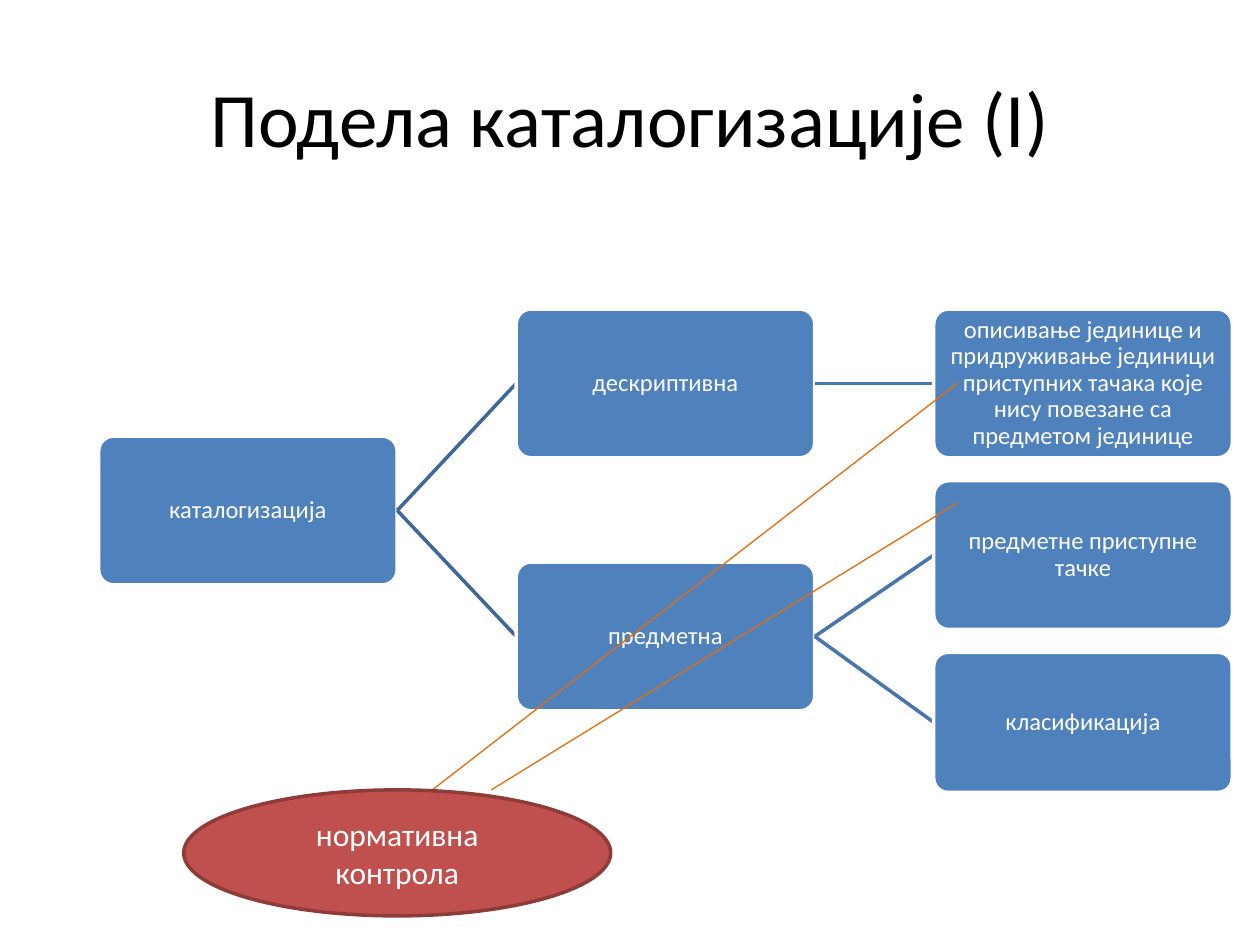
from pptx import Presentation
from pptx.dml.color import RGBColor
from pptx.enum.shapes import MSO_CONNECTOR, MSO_SHAPE
from pptx.enum.text import MSO_ANCHOR, PP_ALIGN
from pptx.oxml.ns import qn
from pptx.util import Pt
from lxml.etree import SubElement

WHITE = RGBColor(0xFF, 0xFF, 0xFF)
BLACK = RGBColor(0, 0, 0)
BLUE = RGBColor(0x4F, 0x81, 0xBD)
LINK_COLORS = [RGBColor(0x3F, 0x67, 0x97), RGBColor(0x48, 0x75, 0xAC)]
RED = RGBColor(0xC0, 0x50, 0x4D)
DARK_RED = RGBColor(0x8E, 0x3B, 0x39)
ORANGE = RGBColor(0xE4, 0x6C, 0x0A)

NODE_W, NODE_H = 170.6, 85
COLUMN_STEP = 238.6

# Node: text, top within the tree, height, children
TREE = ("каталогизација", 72.6, NODE_H, [
    ("дескриптивна", 0, NODE_H, [
        ("описивање јединице и придруживање јединици приступних тачака "
         "које нису повезане са предметом јединице", 0, NODE_H, []),
    ]),
    ("предметна", 144.6, NODE_H, [
        ("предметне приступне тачке", 98.1, NODE_H, []),
        ("класификација", 196.2, 80, []),
    ]),
])


def set_text(tf, text, size, color):
    tf.word_wrap = True
    tf.vertical_anchor = MSO_ANCHOR.MIDDLE
    p = tf.paragraphs[0]
    p.text = text
    p.alignment = PP_ALIGN.CENTER
    p.font.name = "Calibri"
    p.font.size = Pt(size)
    p.font.color.rgb = color
    return p


def add_shape(s, kind, x, y, w, h, fill, line):
    sp = s.shapes.add_shape(kind, Pt(x), Pt(y), Pt(w), Pt(h))
    sp.shadow.inherit = False
    sp.fill.solid()
    sp.fill.fore_color.rgb = fill
    sp.line.color.rgb = line
    sp.line.width = Pt(2)
    return sp


def add_line(s, x1, y1, x2, y2, color, width):
    cxn = s.shapes.add_connector(
        MSO_CONNECTOR.STRAIGHT, Pt(x1), Pt(y1), Pt(x2), Pt(y2))
    cxn.line.color.rgb = color
    cxn.line.width = Pt(width)
    SubElement(cxn._element.spPr, qn("a:effectLst"))
    return cxn


def add_title(s, x, y, w, h):
    title = s.shapes.title
    title.left, title.top, title.width, title.height = Pt(x), Pt(y), Pt(w), Pt(h)
    set_text(title.text_frame, "Подела каталогизације (I)", 44, BLACK)


def add_tree(s, x, y, node, level=0):
    """Draw a node and its branches; each link lies beneath its child."""
    text, top, height, children = node
    sp = add_shape(s, MSO_SHAPE.ROUNDED_RECTANGLE, x + level * COLUMN_STEP,
                   y + top, NODE_W, height, BLUE, WHITE)
    sp.adjustments[0] = 0.1
    tf = sp.text_frame
    tf.margin_left = tf.margin_right = Pt(3.2)
    tf.margin_top = tf.margin_bottom = Pt(3.2)
    set_text(tf, text, 14, WHITE).line_spacing = 0.9
    for child in children:
        link = add_line(s, 0, 0, 1, 1, LINK_COLORS[level], 2)
        child_sp = add_tree(s, x, y, child, level + 1)
        link.begin_connect(sp, 3)
        link.end_connect(child_sp, 1)
    return sp


def add_control(s, x, y, w, h):
    # Lines to the two kinds of access points
    for x1, y1, x2 in [(547.2, 218.9, x + 142), (547.2, 287.3, x + 175.7)]:
        add_line(s, x1, y1, x2, y, ORANGE, 0.75)
    oval = add_shape(s, MSO_SHAPE.OVAL, x, y, w, h, RED, DARK_RED)
    set_text(oval.text_frame, "нормативна контрола", 18, WHITE)


def main():
    prs = Presentation()
    prs.slide_width, prs.slide_height = Pt(720), Pt(540)
    s = prs.slides.add_slide(prs.slide_layouts[5])
    add_title(s, 36, 21.6, 648, 90)
    add_tree(s, 56.4, 176.6, TREE)
    add_control(s, 105, 451.4, 244, 72)
    prs.save("out.pptx")


if __name__ == "__main__":
    main()
